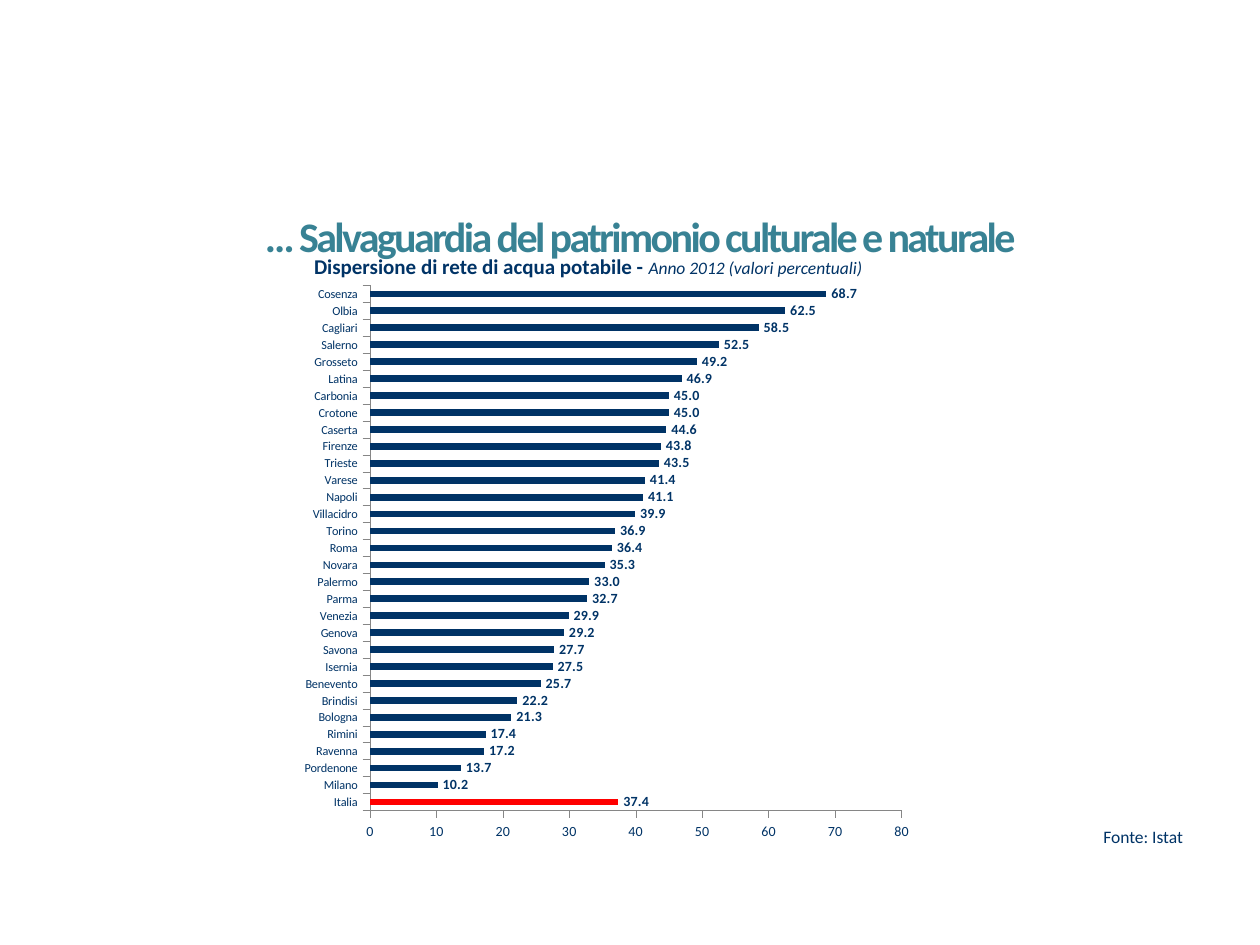
from dataclasses import dataclass

from lxml import etree
from pptx import Presentation
from pptx.chart.data import CategoryChartData
from pptx.dml.color import RGBColor
from pptx.enum.chart import XL_CHART_TYPE, XL_LABEL_POSITION, XL_TICK_MARK
from pptx.enum.text import MSO_ANCHOR, PP_ALIGN
from pptx.oxml import parse_xml
from pptx.oxml.ns import nsdecls
from pptx.util import Emu, Pt

BARS = XL_CHART_TYPE.BAR_CLUSTERED
OUTER = XL_LABEL_POSITION.OUTSIDE_END
TICK_OUT = XL_TICK_MARK.OUTSIDE
TICK_NONE = XL_TICK_MARK.NONE
BOTTOM = MSO_ANCHOR.BOTTOM
CENTER = PP_ALIGN.CENTER
PLAIN_GRID = "{2D5ABB26-0587-4C30-8999-92F81FD0307C}"
SCALE = 914400 / 126

LOSSES = [
    ("Italia", 37.4), ("Milano", 10.2), ("Pordenone", 13.7), ("Ravenna", 17.2),
    ("Rimini", 17.4), ("Bologna", 21.3), ("Brindisi", 22.2), ("Benevento", 25.7),
    ("Isernia", 27.5), ("Savona", 27.7), ("Genova", 29.2), ("Venezia", 29.9),
    ("Parma", 32.7), ("Palermo", 33.0), ("Novara", 35.3), ("Roma", 36.4),
    ("Torino", 36.9), ("Villacidro", 39.9), ("Napoli", 41.1), ("Varese", 41.4),
    ("Trieste", 43.5), ("Firenze", 43.8), ("Caserta", 44.6), ("Crotone", 45.0),
    ("Carbonia", 45.0), ("Latina", 46.9), ("Grosseto", 49.2), ("Salerno", 52.5),
    ("Cagliari", 58.5), ("Olbia", 62.5), ("Cosenza", 68.7),
]


@dataclass(frozen=True)
class Theme:
    """Colours, font and type sizes of the slide."""
    font: str = "Calibri"
    teal: str = "388294"
    navy: str = "003366"
    red: str = "FF0000"
    gray: str = "868686"
    title: int = 24
    head: int = 12
    note: int = 10
    value: int = 8
    city: int = 7


THEME = Theme()


def px(count):
    """Turn whole pixels into EMU."""
    return Emu(round(count * SCALE))


def style(font, size, color=THEME.navy, bold=False, italic=False):
    """Set the look of a font."""
    font.name = THEME.font
    font.size = Pt(size)
    font.bold = bold
    font.italic = italic
    font.color.rgb = RGBColor.from_string(color)


def write(para, text, spacing=None, **look):
    """Add a run of text with its format."""
    run = para.add_run()
    run.text = text
    style(run.font, **look)
    if spacing is not None:
        run.font._element.set("spc", str(spacing))


def add_label(slide, box, text, align=None, **look):
    """Place a wrapped text box."""
    frame = slide.shapes.add_textbox(*map(px, box)).text_frame
    frame.word_wrap = True
    para = frame.paragraphs[0]
    para.alignment = align
    write(para, text, **look)


def clear_grid(table, cell):
    """Remove the style and borders of a table cell."""
    table._tbl.tblPr.find("{*}tableStyleId").text = PLAIN_GRID
    props = cell._tc.get_or_add_tcPr()
    for spot, side in enumerate("LRTB"):
        line = parse_xml(f"<a:ln{side} {nsdecls('a')} w='0'><a:noFill/></a:ln{side}>")
        props.insert(spot, line)


def add_heading(slide, box):
    """Place the chart heading in a table of one cell."""
    table = slide.shapes.add_table(1, 1, *map(px, box)).table
    table.first_row = table.horz_banding = False
    cell = table.cell(0, 0)
    cell.fill.background()
    clear_grid(table, cell)
    cell.vertical_anchor = BOTTOM
    cell.margin_left = cell.margin_right = cell.margin_top = px(1)
    cell.margin_bottom = 0
    para = cell.text_frame.paragraphs[0]
    write(para, "Dispersione di rete di acqua potabile - ", size=THEME.head, bold=True)
    write(para, "Anno 2012 (valori percentuali)", size=THEME.note, italic=True)


def set_axis(axis, size):
    """Give an axis its ticks, line and font."""
    axis.has_major_gridlines = False
    axis.major_tick_mark = TICK_OUT
    axis.minor_tick_mark = TICK_NONE
    axis.format.line.color.rgb = RGBColor.from_string(THEME.gray)
    axis.format.line.width = Pt(0.25)
    style(axis.tick_labels.font, size)


def set_plot(chart, **shares):
    """Fix the inner plot area as shares of the chart."""
    area = chart.plots[0]._element.getparent()
    for old in area.findall("{*}layout"):
        area.remove(old)
    layout = parse_xml(f"<c:layout {nsdecls('c')}><c:manualLayout/></c:layout>")
    marks = {"layoutTarget": "inner", "xMode": "edge", "yMode": "edge", **shares}
    space = etree.QName(layout).namespace
    for name, value in marks.items():
        etree.SubElement(layout[0], f"{{{space}}}{name}").set("val", str(value))
    area.insert(0, layout)


def add_bars(slide, box):
    """Draw the bar chart of water losses."""
    data = CategoryChartData(number_format="#,##0.0")
    data.categories = [city for city, _ in LOSSES]
    data.add_series("Series 1", [loss for _, loss in LOSSES])
    chart = slide.shapes.add_chart(BARS, *map(px, box), data).chart
    chart.has_legend = chart.has_title = False
    style(chart.font, THEME.note)
    set_axis(chart.category_axis, THEME.city)
    scale = chart.value_axis
    set_axis(scale, THEME.value)
    scale.minimum_scale, scale.maximum_scale, scale.major_unit = 0, 80, 10
    scale.tick_labels.number_format = "0"
    scale.tick_labels.number_format_is_linked = False
    plot = chart.plots[0]
    plot.gap_width = 150
    plot.vary_by_categories = False
    series = plot.series[0]
    for part, color in ((series, THEME.navy), (series.points[0], THEME.red)):
        part.format.fill.solid()
        part.format.fill.fore_color.rgb = RGBColor.from_string(color)
    labels = series.data_labels
    labels.show_value = True
    labels.position = OUTER
    labels.number_format = "#,##0.0"
    labels.number_format_is_linked = False
    style(labels.font, THEME.value, bold=True)
    set_plot(chart, x=0.12, y=0.02, w=0.84, h=0.91)


def main():
    """Build and save the slide."""
    deck = Presentation()
    deck.slide_width, deck.slide_height = px(1260), px(945)
    slide = deck.slides.add_slide(deck.slide_layouts[6])
    add_label(slide, (184, 204, 912, 115),
              "… Salvaguardia del patrimonio culturale e naturale",
              align=CENTER, size=THEME.title, color=THEME.teal, bold=True, spacing=-150)
    add_heading(slide, (313, 243, 625, 37))
    add_bars(slide, (294, 274, 633, 577))
    add_label(slide, (1091, 820, 154, 34), "Fonte: Istat", size=THEME.note)
    deck.save("out.pptx")


if __name__ == "__main__":
    main()
